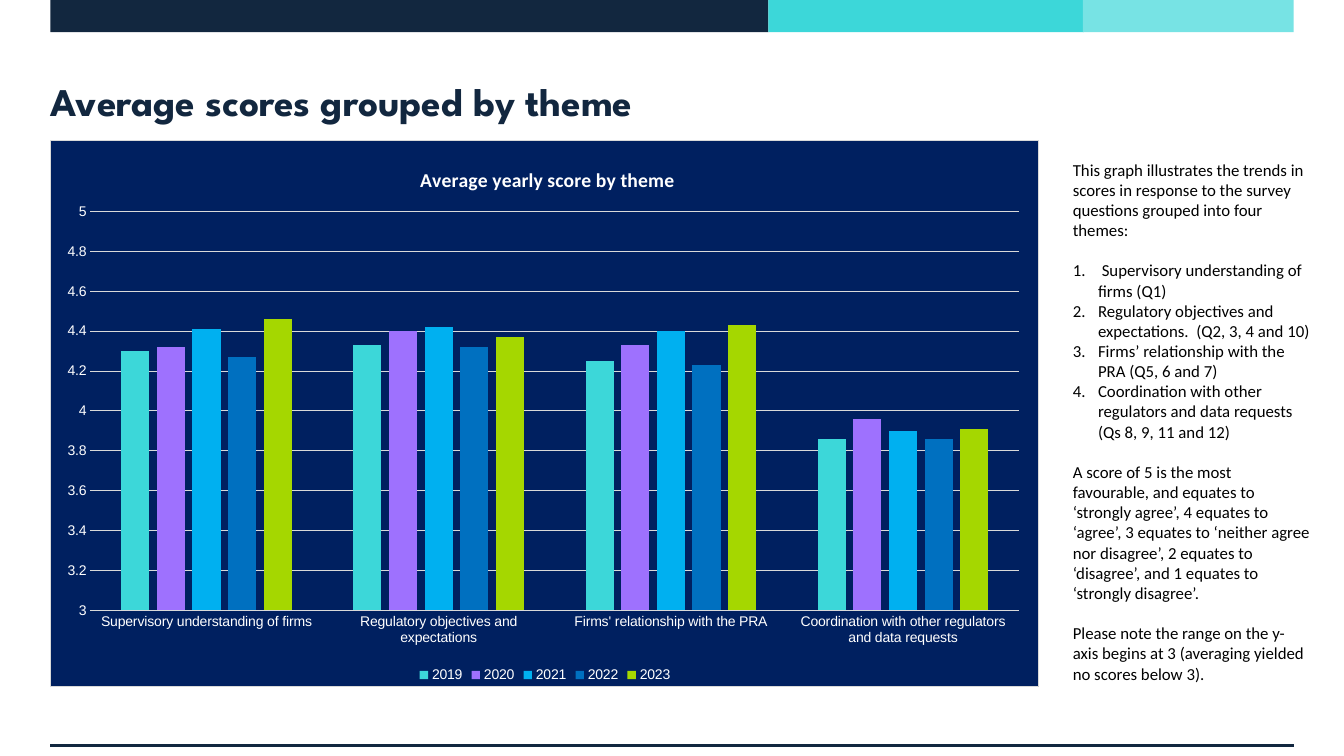
from dataclasses import dataclass

from lxml import etree
from pptx import Presentation
from pptx.chart.data import CategoryChartData
from pptx.dml.color import RGBColor
from pptx.enum.chart import XL_CHART_TYPE, XL_LEGEND_POSITION, XL_TICK_MARK
from pptx.enum.shapes import MSO_CONNECTOR, MSO_SHAPE
from pptx.enum.text import MSO_ANCHOR, MSO_AUTO_SIZE, PP_ALIGN
from pptx.oxml import parse_xml
from pptx.oxml.ns import nsdecls, qn
from pptx.util import Inches, Pt

COLUMNS = XL_CHART_TYPE.COLUMN_CLUSTERED
BOTTOM = XL_LEGEND_POSITION.BOTTOM
NO_TICK = XL_TICK_MARK.NONE
STRAIGHT = MSO_CONNECTOR.STRAIGHT
RECTANGLE = MSO_SHAPE.RECTANGLE
TOP, MIDDLE = MSO_ANCHOR.TOP, MSO_ANCHOR.MIDDLE
NO_AUTOFIT = MSO_AUTO_SIZE.NONE
LEFT = PP_ALIGN.LEFT


@dataclass(frozen=True)
class Theme:
    navy: str = "12273F"
    turquoise: str = "3CD7D9"
    pale_turquoise: str = "77E3E4"
    black: str = "000000"
    white: str = "FFFFFF"
    chart_background: str = "002060"
    grid: str = "D9D9D9"
    series: tuple = ("3CD7D9", "9E71FE", "00B0F0", "0070C0", "A5D700")
    title_font: str = "League Spartan"
    body_font: str = "Calibri"
    chart_font: str = "Arial"
    title_size: float = 28
    body_size: float = 12
    body_line: float = 14.4
    chart_title_size: float = 14
    chart_size: float = 10
    thin_line: float = 0.75
    rule_line: float = 2.25


THEME = Theme()

BANDS = [
    (0.5, 7.12, THEME.navy),
    (7.62, 3.13, THEME.turquoise),
    (10.74, 2.09, THEME.pale_turquoise),
]

# Each paragraph: text, numbered, starts a new block
COMMENTARY = [
    ("This graph illustrates the trends in scores in response to the survey "
     "questions grouped into four themes:", False, False),
    (" Supervisory understanding of firms (Q1)", True, True),
    ("Regulatory objectives and expectations.  (Q2, 3, 4 and 10)", True, False),
    ("Firms’ relationship with the PRA (Q5, 6 and 7)", True, False),
    ("Coordination with other regulators and data requests "
     "(Qs 8, 9, 11 and 12)", True, False),
    ("A score of 5 is the most favourable, and equates to ‘strongly agree’, "
     "4 equates to ‘agree’, 3 equates to ‘neither agree nor disagree’, "
     "2 equates to ‘disagree’, and 1 equates to ‘strongly disagree’.", False, True),
    ("Please note the range on the y-axis begins at 3 "
     "(averaging yielded no scores below 3).", False, True),
]

THEMES = [
    "Supervisory understanding of firms",
    "Regulatory objectives and expectations",
    "Firms' relationship with the PRA",
    "Coordination with other regulators and data requests",
]
SCORES = {
    "2019": (4.3, 4.33, 4.25, 3.86),
    "2020": (4.32, 4.4, 4.33, 3.96),
    "2021": (4.41, 4.42, 4.4, 3.9),
    "2022": (4.27, 4.32, 4.23, 3.86),
    "2023": (4.46, 4.37, 4.43, 3.91),
}


def style_font(font, name, size, color, bold=False):
    font.name = name
    font.size = Pt(size)
    font.bold = bold
    font.color.rgb = RGBColor.from_string(color)


def style_line(line, color, width):
    line.color.rgb = RGBColor.from_string(color)
    line.width = Pt(width)


def add_band(slide, left, width, color):
    band = slide.shapes.add_shape(
        RECTANGLE, Inches(left), 0, Inches(width), Inches(0.32))
    band.shadow.inherit = False
    band.fill.solid()
    band.fill.fore_color.rgb = RGBColor.from_string(color)
    band.line.fill.background()


def add_footer_rule(slide):
    rule = slide.shapes.add_connector(
        STRAIGHT, Inches(0.5), Inches(7.4), Inches(12.83), Inches(7.4))
    style_line(rule.line, THEME.navy, THEME.rule_line)
    etree.SubElement(rule.element.spPr, qn("a:effectLst"))


def place_placeholder(placeholder, left, top, width, height, anchor):
    """Move a placeholder and return its text frame without insets."""
    placeholder.left, placeholder.top = Inches(left), Inches(top)
    placeholder.width, placeholder.height = Inches(width), Inches(height)
    frame = placeholder.text_frame
    frame.margin_left = frame.margin_right = 0
    frame.margin_top = frame.margin_bottom = 0
    frame.word_wrap = True
    frame.auto_size = NO_AUTOFIT
    frame.vertical_anchor = anchor
    return frame


def set_title(slide, text):
    frame = place_placeholder(slide.shapes.title, 0.5, 0.5, 12.33, 1, MIDDLE)
    frame.text = text
    paragraph = frame.paragraphs[0]
    paragraph.alignment = LEFT
    style_font(paragraph.runs[0].font, THEME.title_font, THEME.title_size,
               THEME.navy, bold=True)


def set_numbering(paragraph, numbered):
    """Number the paragraph with a hanging indent, or clear its bullet."""
    properties = paragraph._p.get_or_add_pPr()
    indent = Inches(0.25) if numbered else 0
    properties.set("marL", str(indent))
    properties.set("indent", str(-indent))
    if numbered:
        etree.SubElement(properties, qn("a:buFont"), typeface="+mj-lt")
        etree.SubElement(properties, qn("a:buAutoNum"), type="arabicPeriod")
    else:
        etree.SubElement(properties, qn("a:buNone"))


def set_commentary(slide):
    frame = place_placeholder(
        slide.placeholders[1], 10.64, 1.58, 2.36, 5.15, TOP)
    frame.text = "\n".join(text for text, _, _ in COMMENTARY)
    for paragraph, (_, numbered, new_block) in zip(frame.paragraphs, COMMENTARY):
        paragraph.alignment = LEFT
        paragraph.line_spacing = Pt(THEME.body_line)
        paragraph.space_before = Pt(THEME.body_line if new_block else 0)
        paragraph.space_after = Pt(0)
        set_numbering(paragraph, numbered)
        style_font(paragraph.runs[0].font, THEME.body_font, THEME.body_size,
                   THEME.black)


def set_layout(element, **values):
    """Place a chart part at fractions of the chart area."""
    layout = element.find(qn("c:layout"))
    if layout is None:
        layout = etree.Element(qn("c:layout"))
        element.insert(0, layout)
    manual = etree.SubElement(layout, qn("c:manualLayout"))
    for name, value in values.items():
        etree.SubElement(manual, qn(f"c:{name}"), val=str(value))


def fill_chart_area(chart):
    chart._chartSpace.find(qn("c:chart")).addnext(parse_xml(
        f'<c:spPr {nsdecls("c", "a")}>'
        f'<a:solidFill><a:srgbClr val="{THEME.chart_background}"/></a:solidFill>'
        f'<a:ln w="{Pt(THEME.thin_line)}"><a:solidFill>'
        f'<a:srgbClr val="{THEME.grid}"/></a:solidFill></a:ln></c:spPr>'))


def style_axes(chart):
    for axis in (chart.category_axis, chart.value_axis):
        axis.major_tick_mark = axis.minor_tick_mark = NO_TICK
        style_font(axis.tick_labels.font, THEME.chart_font, THEME.chart_size,
                   THEME.white)
    style_line(chart.category_axis.format.line, THEME.grid, THEME.thin_line)
    scores = chart.value_axis
    scores.minimum_scale, scores.maximum_scale, scores.major_unit = 3, 5, 0.2
    scores.format.line.fill.background()
    style_line(scores.major_gridlines.format.line, THEME.grid, THEME.thin_line)


def add_score_chart(slide):
    data = CategoryChartData()
    data.categories = THEMES
    for year, scores in SCORES.items():
        data.add_series(year, scores)
    chart = slide.shapes.add_chart(
        COLUMNS, Inches(0.5), Inches(1.39), Inches(9.81), Inches(5.43), data).chart
    style_font(chart.font, THEME.chart_font, THEME.chart_size, THEME.white)
    fill_chart_area(chart)

    title = chart.chart_title
    title.text_frame.text = "Average yearly score by theme"
    style_font(title.text_frame.paragraphs[0].runs[0].font, THEME.body_font,
               THEME.chart_title_size, THEME.white, bold=True)
    set_layout(title._element, xMode="edge", yMode="edge", x=0.37, y=0.04)

    style_axes(chart)
    chart.has_legend = True
    chart.legend.position = BOTTOM
    chart.legend.include_in_layout = False
    style_font(chart.legend.font, THEME.chart_font, THEME.chart_size, THEME.white)

    plot = chart.plots[0]
    plot.gap_width, plot.overlap = 219, -27
    plot.vary_by_categories = False
    for series, color in zip(plot.series, THEME.series):
        series.format.fill.solid()
        series.format.fill.fore_color.rgb = RGBColor.from_string(color)
    set_layout(plot._element.getparent(), layoutTarget="inner", xMode="edge",
               yMode="edge", x=0.04, y=0.13, w=0.94, h=0.73)


def main():
    presentation = Presentation()
    presentation.slide_width, presentation.slide_height = Inches(13.33), Inches(7.5)
    slide = presentation.slides.add_slide(presentation.slide_layouts[1])
    for left, width, color in BANDS:
        add_band(slide, left, width, color)
    add_footer_rule(slide)
    set_title(slide, "Average scores grouped by theme")
    set_commentary(slide)
    add_score_chart(slide)
    presentation.save("out.pptx")


if __name__ == "__main__":
    main()
